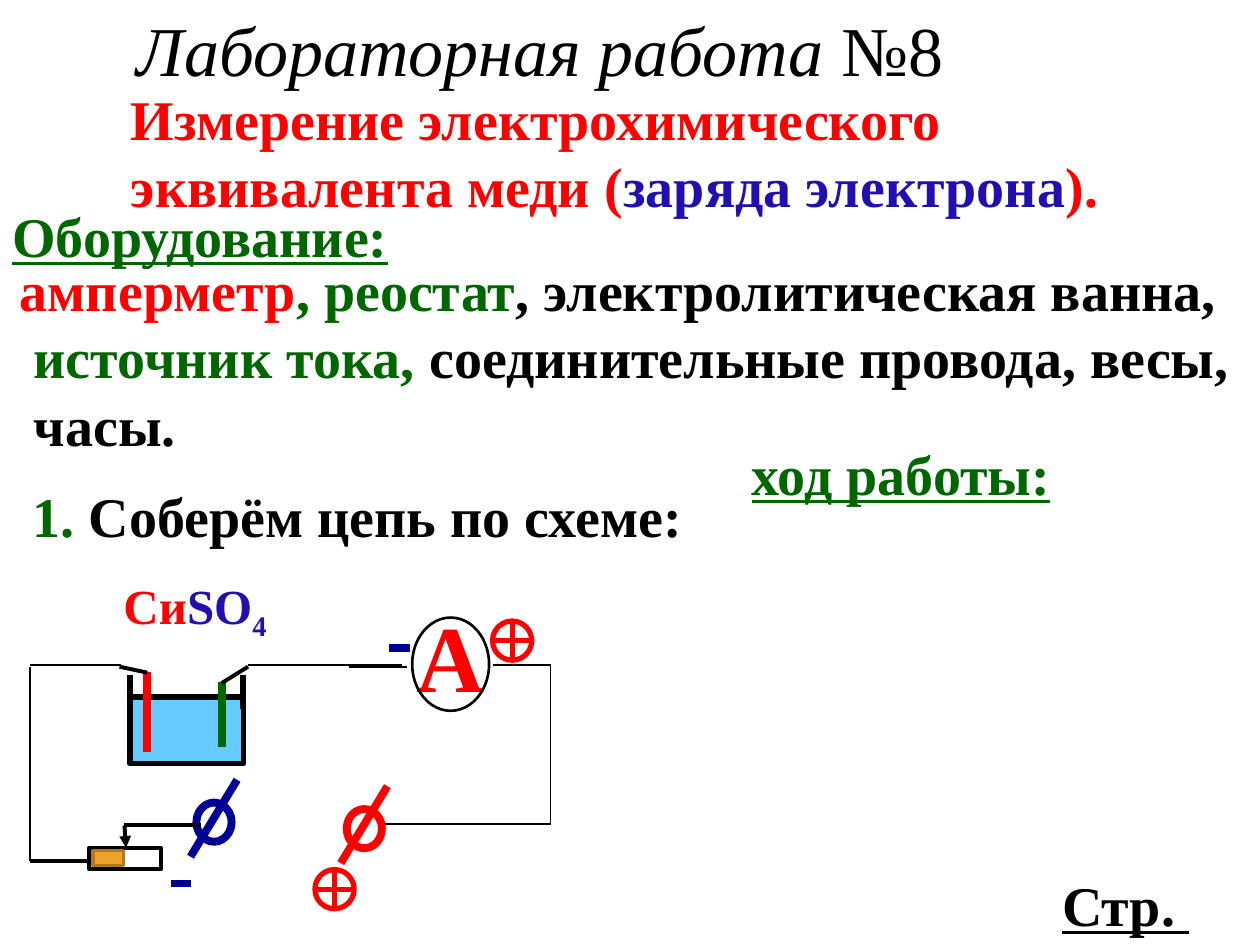
from dataclasses import dataclass
from typing import NamedTuple, Optional

from lxml.etree import SubElement
from pptx import Presentation
from pptx.dml.color import RGBColor
from pptx.enum.shapes import MSO_CONNECTOR, MSO_SHAPE
from pptx.enum.text import MSO_AUTO_SIZE
from pptx.oxml.ns import qn
from pptx.slide import Slide
from pptx.util import Cm, Pt


@dataclass(frozen=True)
class Theme:
    font: str = "Times New Roman"
    black: str = "000000"
    white: str = "FFFFFF"
    red: str = "FF0000"
    green: str = "006600"
    violet: str = "220FB1"
    blue: str = "000099"
    water: str = "66CCFF"
    amber: str = "F0A22E"
    brown: str = "B27822"
    title: int = 40
    body: int = 32
    formula: int = 28
    meter: int = 54
    thin: float = 1
    outline: float = 1.5
    medium: float = 2.25
    wall: float = 3
    thick: float = 4.5


THEME = Theme()


class TextPart(NamedTuple):
    text: str
    color: str = THEME.black
    size: int = THEME.body
    format: dict = {"bold": True}
    baseline: Optional[int] = None


class TextBlock(NamedTuple):
    left: float
    top: float
    width: float
    height: float
    paragraphs: list
    wrap: bool = False
    indents: tuple = ()


class Figure(NamedTuple):
    preset: MSO_SHAPE
    left: float
    top: float
    width: float
    height: float
    line: str
    weight: float
    fill: Optional[str] = None


class Wire(NamedTuple):
    x1: float
    y1: float
    x2: float
    y2: float
    weight: float = THEME.thin
    color: str = THEME.black
    arrow: bool = False


HEADING = {"bold": True, "underline": True}

TEXT_BLOCKS = [
    TextBlock(2.51, 0, 16.94, 1.96, [[
        TextPart("Лабораторная работа ", size=THEME.title, format={"italic": True}),
        TextPart("№8", size=THEME.title, format={"italic": False})]]),
    TextBlock(2.39, 1.57, 22.56, 3, [[
        TextPart("Измерение электрохимического эквивалента меди (", THEME.red),
        TextPart("заряда электрона", THEME.violet),
        TextPart(").", THEME.red)]], wrap=True),
    TextBlock(0, 3.94, 8.15, 1.63, [[TextPart("Оборудование:", THEME.green, format=HEADING)]]),
    TextBlock(0.15, 5.03, 25.15, 4.37, [
        [TextPart("амперметр", THEME.red), TextPart(", реостат", THEME.green),
         TextPart(", электролитическая ванна,")],
        [TextPart("источник тока, ", THEME.green),
         TextPart("соединительные провода, весы,")],
        [TextPart("часы.")]], indents=(0, 0.28, 0.28)),
    TextBlock(14.91, 8.74, 6.58, 1.63, [[TextPart("ход работы:", THEME.green, format=HEADING)]]),
    TextBlock(0.41, 9.58, 13.74, 1.63, [[
        TextPart("1. ", THEME.green), TextPart("Соберём цепь по схеме:")]]),
    TextBlock(2.24, 11.48, 3.48, 1.45, [[
        TextPart("Си", THEME.red, THEME.formula),
        TextPart("SO", THEME.violet, THEME.formula),
        TextPart("4", THEME.violet, THEME.formula, baseline=-25000)]]),
    TextBlock(21.16, 17.42, 4.24, 1.63, [[TextPart("Стр. ", format=HEADING)]], wrap=True),
    TextBlock(7.44, 11.94, 3.61, 4.06, [[TextPart("А", THEME.red, THEME.meter)]],
              wrap=True, indents=(0.71,)),
]

CIRCUIT_WIRES = [
    Wire(2.44, 13.41, 0.61, 13.41),
    Wire(8.1, 13.41, 5, 13.41),
    Wire(8.2, 13.44, 7.04, 13.44),
    Wire(11.1, 13.41, 9.93, 13.41),
    Wire(11.1, 13.41, 11.1, 16.61),
    Wire(0.61, 13.44, 0.61, 17.35),
    Wire(11.1, 16.61, 7.34, 16.61),
    Wire(0.61, 17.35, 1.8, 17.35, THEME.medium),
]
BATH_WIRES = [
    *(Wire(x, 13.61, x, 14.3, THEME.wall) for x in (2.62, 4.9)),
    Wire(2.97, 13.54, 2.97, 15.16, THEME.thick, THEME.red),
    Wire(2.97, 13.56, 2.41, 13.44, THEME.medium),
    Wire(4.47, 13.74, 4.47, 15.06, THEME.thick, THEME.green),
    Wire(4.47, 13.77, 5, 13.44, THEME.medium),
]
RHEOSTAT_WIRES = [
    Wire(2.51, 16.64, 2.54, 17.09, THEME.medium, arrow=True),
    Wire(2.51, 16.64, 4.06, 16.64, THEME.medium),
]

AMMETER = Figure(MSO_SHAPE.OVAL, 8.31, 12.45, 1.55, 1.88, THEME.black, THEME.outline)
BATH = Figure(MSO_SHAPE.RECTANGLE, 2.62, 14.05, 2.29, 1.35, THEME.black, THEME.wall, THEME.water)
RHEOSTAT = Figure(MSO_SHAPE.RECTANGLE, 1.8, 17.09, 1.45, 0.43, THEME.black, THEME.medium)
SLIDER = Figure(MSO_SHAPE.RECTANGLE, 1.88, 17.15, 0.61, 0.3, THEME.brown, 2, THEME.amber)


def add_text(slide: Slide, block: TextBlock) -> None:
    box = slide.shapes.add_textbox(*map(Cm, block[:4]))
    frame = box.text_frame
    frame.word_wrap = block.wrap
    frame.auto_size = MSO_AUTO_SIZE.NONE if block.wrap else MSO_AUTO_SIZE.SHAPE_TO_FIT_TEXT
    for index, parts in enumerate(block.paragraphs):
        paragraph = frame.add_paragraph() if index else frame.paragraphs[0]
        if block.indents:
            paragraph._p.get_or_add_pPr().set("marL", str(Cm(block.indents[index])))
        for part in parts:
            run = paragraph.add_run()
            run.text = part.text
            values = {"name": THEME.font, "size": Pt(part.size), **part.format}
            for name, value in values.items():
                setattr(run.font, name, value)
            run.font.color.rgb = RGBColor.from_string(part.color)
            if part.baseline:
                run._r.get_or_add_rPr().set("baseline", str(part.baseline))


def add_figure(slide: Slide, figure: Figure) -> None:
    shape = slide.shapes.add_shape(figure.preset, *map(Cm, figure[1:5]))
    shape.shadow.inherit = False
    shape.line.color.rgb = RGBColor.from_string(figure.line)
    shape.line.width = Pt(figure.weight)
    if figure.fill:
        shape.fill.solid()
        shape.fill.fore_color.rgb = RGBColor.from_string(figure.fill)
    else:
        shape.fill.background()


def add_wire(slide: Slide, wire: Wire) -> None:
    connector = slide.shapes.add_connector(MSO_CONNECTOR.STRAIGHT, *map(Cm, wire[:4]))
    connector.line.color.rgb = RGBColor.from_string(wire.color)
    connector.line.width = Pt(wire.weight)
    if wire.arrow:
        SubElement(connector.line._get_or_add_ln(), qn("a:tailEnd"), type="triangle")
    SubElement(connector._element.spPr, qn("a:effectLst"))


def add_terminal(slide: Slide, left: float, top: float, color: str) -> None:
    """Draw a source terminal: a ring crossed by a slanted stroke."""
    add_figure(slide, Figure(MSO_SHAPE.OVAL, left, top, 0.71, 0.79, color, THEME.thick, THEME.white))
    add_wire(slide, Wire(left - 0.12, top + 1.09, left + 0.82, top - 0.46, THEME.thick, color))


def main() -> None:
    presentation = Presentation()
    presentation.slide_width, presentation.slide_height = Cm(25.4), Cm(19.05)
    slide = presentation.slides.add_slide(presentation.slide_layouts[6])

    for block in TEXT_BLOCKS:
        add_text(slide, block)
    for left, top in ((6.35, 17.53), (9.93, 12.52)):
        add_figure(slide, Figure(MSO_SHAPE.FLOWCHART_OR, left, top, 0.79, 0.79,
                                 THEME.red, THEME.wall, THEME.white))
    for left, top in ((3.45, 17.81), (7.85, 13.06)):
        add_wire(slide, Wire(left, top, left + 0.41, top, THEME.thick, THEME.blue))
    add_figure(slide, AMMETER)
    for wire in CIRCUIT_WIRES:
        add_wire(slide, wire)
    add_terminal(slide, 6.99, 16.31, THEME.red)
    add_terminal(slide, 3.96, 16.18, THEME.blue)
    add_figure(slide, BATH)
    for wire in BATH_WIRES:
        add_wire(slide, wire)
    add_figure(slide, RHEOSTAT)
    for wire in RHEOSTAT_WIRES:
        add_wire(slide, wire)
    add_figure(slide, SLIDER)
    presentation.save("out.pptx")


if __name__ == "__main__":
    main()
